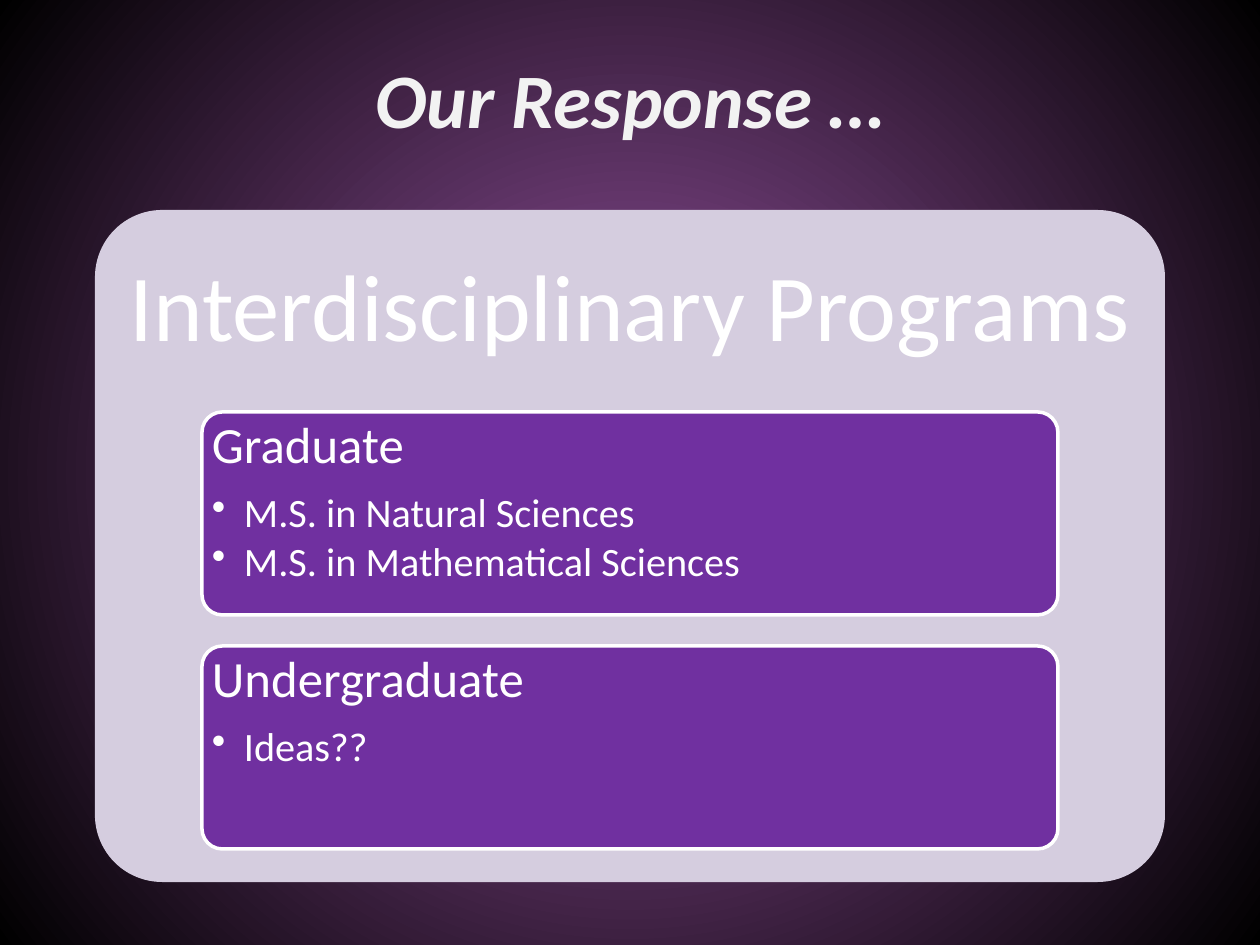
from lxml.etree import SubElement
from pptx import Presentation
from pptx.dml.color import RGBColor
from pptx.enum.shapes import MSO_SHAPE
from pptx.enum.text import MSO_ANCHOR, PP_ALIGN
from pptx.oxml.ns import qn
from pptx.util import Emu, Pt

PURPLE_GLOW = RGBColor(0x96, 0x51, 0xA1)
BLACK = RGBColor(0, 0, 0)
WHITE = RGBColor(255, 255, 255)
OFF_WHITE = RGBColor(0xF2, 0xF2, 0xF2)
LAVENDER = RGBColor(0xD5, 0xCD, 0xDF)
PURPLE = RGBColor(0x70, 0x30, 0xA0)
FONT = "Calibri"
PX_PER_INCH = 126

PROGRAMS = [
    ("Graduate", ["M.S. in Natural Sciences", "M.S. in Mathematical Sciences"]),
    ("Undergraduate", ["Ideas??"]),
]


def px(length):
    return Emu(round(length * 914400 / PX_PER_INCH))


def add_span(para, text, size, color=WHITE):
    span = para.add_run()
    span.text = text
    span.font.name = FONT
    span.font.size = Pt(size)
    span.font.color.rgb = color
    return span


def set_spacing(para, after):
    para.line_spacing = 0.9
    para.space_before = Pt(0)
    para.space_after = Pt(after)


def add_bullet(para):
    props = para._p.get_or_add_pPr()
    props.set("marL", str(px(32)))
    props.set("indent", str(px(-32)))
    SubElement(props, qn("a:buChar")).set("char", "•")


def add_round_box(page, box, fill, line=None):
    shape = page.shapes.add_shape(MSO_SHAPE.ROUNDED_RECTANGLE, *map(px, box))
    shape.adjustments[0] = 0.1
    shape.shadow.inherit = False
    shape.fill.solid()
    shape.fill.fore_color.rgb = fill
    if line is None:
        shape.line.fill.background()
    else:
        shape.line.color.rgb = line
        shape.line.width = Pt(2)


def add_text_frame(page, box, inset_x, inset_y, anchor):
    frame = page.shapes.add_textbox(*map(px, box)).text_frame
    frame.word_wrap = True
    frame.vertical_anchor = anchor
    frame.margin_left = frame.margin_right = px(inset_x)
    frame.margin_top = frame.margin_bottom = px(inset_y)
    return frame


def paint_background(page):
    fill = page.background.fill
    fill.gradient()
    for stop, color in zip(fill.gradient_stops, (PURPLE_GLOW, BLACK)):
        stop.color.rgb = color
    # Turn the linear gradient into a circular one around the centre
    gradient = page.element.find(".//" + qn("a:gradFill"))
    gradient.remove(gradient.find(qn("a:lin")))
    circle = SubElement(gradient, qn("a:path"))
    circle.set("path", "circle")
    center = SubElement(circle, qn("a:fillToRect"))
    for side in "ltrb":
        center.set(side, "50000")


def add_title(page, box):
    title = page.shapes.title
    title.left, title.top, title.width, title.height = map(px, box)
    frame = title.text_frame
    frame.vertical_anchor = MSO_ANCHOR.MIDDLE
    para = frame.paragraphs[0]
    para.alignment = PP_ALIGN.CENTER
    span = add_span(para, "Our Response …", 44, OFF_WHITE)
    span.font.bold = True
    span.font.italic = True


def add_program_card(page, box, name, items):
    add_round_box(page, box, PURPLE, WHITE)
    frame = add_text_frame(page, box, 10, 8, MSO_ANCHOR.TOP)
    para = frame.paragraphs[0]
    set_spacing(para, 10)
    add_span(para, name, 29)
    for item in items:
        para = frame.add_paragraph()
        para.level = 1
        set_spacing(para, 3.5)
        add_bullet(para)
        add_span(para, item, 23)


def add_programs_panel(page, box):
    left, top, width, height = box
    add_round_box(page, box, LAVENDER)

    # Heading fills the top 30 percent
    heading_height = round(height * 0.3)
    frame = add_text_frame(page, (left, top, width, heading_height), 29, 29,
                           MSO_ANCHOR.MIDDLE)
    para = frame.paragraphs[0]
    para.alignment = PP_ALIGN.CENTER
    set_spacing(para, 19)
    add_span(para, "Interdisciplinary Programs", 54)

    # Cards are stacked below, inset by a tenth of the width
    card_height, gap = 203, 31
    inset = width // 10
    for index, (name, items) in enumerate(PROGRAMS):
        card_top = top + heading_height + index * (card_height + gap)
        card = (left + inset, card_top, width - 2 * inset, card_height)
        add_program_card(page, card, name, items)


def main():
    deck = Presentation()
    deck.slide_width, deck.slide_height = px(1260), px(945)
    page = deck.slides.add_slide(deck.slide_layouts[5])
    paint_background(page)
    add_title(page, (0, 0, 1260, 195))
    add_programs_panel(page, (95, 210, 1070, 672))
    deck.save("out.pptx")


if __name__ == "__main__":
    main()
